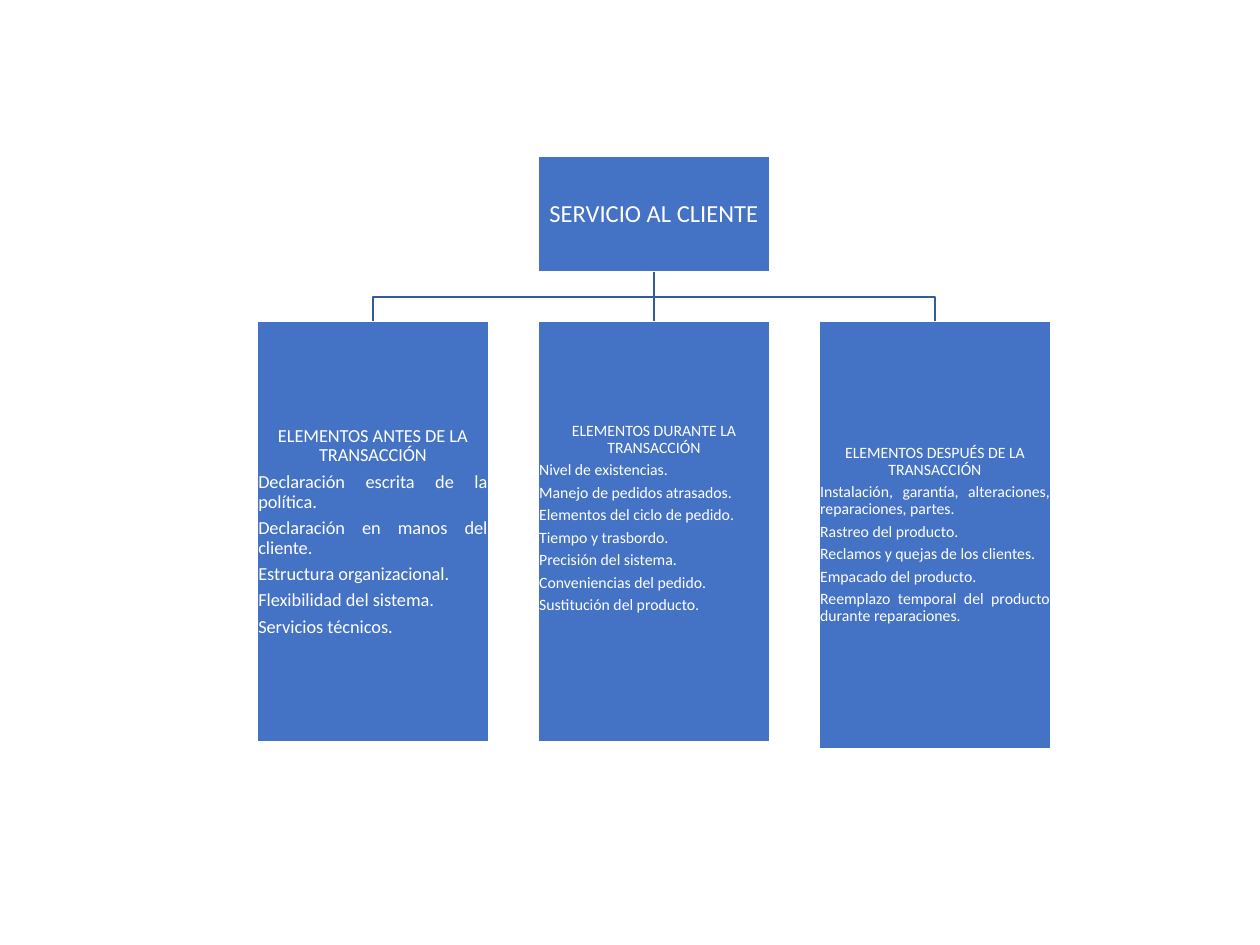
import pptx
import pptx.dml.color
import pptx.enum.shapes
import pptx.enum.text
import pptx.oxml
import pptx.util
from pptx.util import Inches

BLUE = pptx.dml.color.RGBColor(0x44, 0x72, 0xC4)
LINK_BLUE = pptx.dml.color.RGBColor(0x36, 0x5B, 0x9D)
WHITE = pptx.dml.color.RGBColor(0xFF, 0xFF, 0xFF)

BOX_WIDTH = 1.84
COLUMN_LEFT, COLUMN_PITCH = 2.04, 2.23
ROOT_TOP, ROOT_HEIGHT = 1.24, 0.92
STAGE_TOP = 2.55
MARGIN = 0.01

# Heading, items, font size, box height, bottom margin
STAGES = [
    ("ELEMENTOS ANTES DE LA TRANSACCIÓN",
     ["Declaración escrita de la política.",
      "Declaración en manos del cliente.",
      "Estructura organizacional.",
      "Flexibilidad del sistema.",
      "Servicios técnicos."], 10.5, 3.34, MARGIN),
    ("ELEMENTOS DURANTE LA TRANSACCIÓN",
     ["Nivel de existencias.",
      "Manejo de pedidos atrasados.",
      "Elementos del ciclo de pedido.",
      "Tiempo y trasbordo.",
      "Precisión del sistema.",
      "Conveniencias del pedido.",
      "Sustitución del producto."], 9, 3.34, 0.22),
    ("ELEMENTOS DESPUÉS DE LA TRANSACCIÓN",
     ["Instalación, garantía, alteraciones, reparaciones, partes.",
      "Rastreo del producto.",
      "Reclamos y quejas de los clientes.",
      "Empacado del producto.",
      "Reemplazo temporal del producto durante reparaciones."], 9, 3.39, MARGIN),
]


def column_left(column):
    return COLUMN_LEFT + column * COLUMN_PITCH


def style_line(line, color):
    line.color.rgb = color
    line.width = pptx.util.Pt(1)


def add_box(slide, column, top, height, heading, items, size, bottom_margin=MARGIN):
    """Add a blue box with a centred heading over justified items."""
    box = slide.shapes.add_shape(
        pptx.enum.shapes.MSO_SHAPE.RECTANGLE, Inches(column_left(column)),
        Inches(top), Inches(BOX_WIDTH), Inches(height))
    box.shadow.inherit = False
    box.fill.solid()
    box.fill.fore_color.rgb = BLUE
    style_line(box.line, WHITE)

    frame = box.text_frame
    frame.word_wrap = True
    frame.vertical_anchor = pptx.enum.text.MSO_ANCHOR.MIDDLE
    frame.margin_left = frame.margin_right = frame.margin_top = Inches(MARGIN)
    frame.margin_bottom = Inches(bottom_margin)
    align = pptx.enum.text.PP_ALIGN
    for index, text in enumerate([heading, *items]):
        paragraph = frame.add_paragraph() if index else frame.paragraphs[0]
        paragraph.text = text
        paragraph.alignment = align.JUSTIFY if index else align.CENTER
        paragraph.line_spacing = 0.9
        paragraph.space_after = pptx.util.Pt(round(size * 0.35, 1))
        paragraph.font.name = "Calibri"
        paragraph.font.size = pptx.util.Pt(size)
        paragraph.font.color.rgb = WHITE
    return box


def add_straight_link(slide, root, stage):
    link = slide.shapes.add_connector(
        pptx.enum.shapes.MSO_CONNECTOR.STRAIGHT, 0, 0, 0, 0)
    link.begin_connect(root, 2)
    link.end_connect(stage, 0)
    style_line(link.line, LINK_BLUE)
    properties = link._element.spPr
    properties.append(pptx.oxml.parse_xml(
        '<a:effectLst xmlns:a="http://schemas.openxmlformats.org/drawingml/2006/main"/>'))


def add_bent_link(slide, root, stage):
    """Run down from the root, across at half height, and down to the stage."""
    start_x = root.left + root.width // 2
    end_x = stage.left + stage.width // 2
    start_y = root.top + root.height
    middle_y = (start_y + stage.top) // 2
    builder = slide.shapes.build_freeform(start_x, start_y)
    builder.add_line_segments(
        [(start_x, middle_y), (end_x, middle_y), (end_x, stage.top)], close=False)
    link = builder.convert_to_shape()
    link.shadow.inherit = False
    link.fill.background()
    style_line(link.line, LINK_BLUE)


def main():
    presentation = pptx.Presentation()
    presentation.slide_width = Inches(10)
    presentation.slide_height = Inches(7.5)
    slide = presentation.slides.add_slide(presentation.slide_layouts[6])

    root = add_box(slide, 1, ROOT_TOP, ROOT_HEIGHT, "SERVICIO AL CLIENTE", [], 14)
    before, during, after = [
        add_box(slide, column, STAGE_TOP, height, heading, items, size, bottom_margin)
        for column, (heading, items, size, height, bottom_margin) in enumerate(STAGES)]

    add_bent_link(slide, root, before)
    add_straight_link(slide, root, during)
    add_bent_link(slide, root, after)
    presentation.save("out.pptx")


if __name__ == "__main__":
    main()
